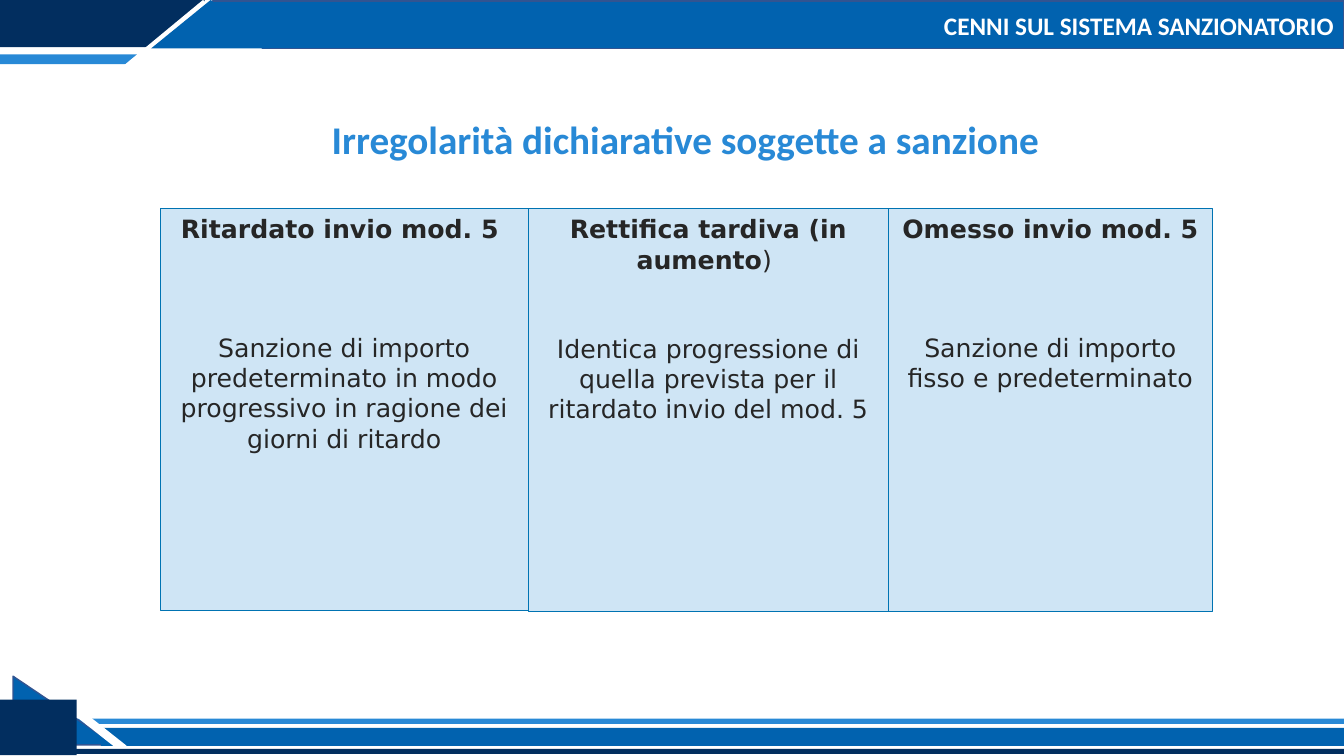
"""Build the slide on penalties for irregular declarations."""
from lxml import etree
from pptx import Presentation
from pptx.dml.color import RGBColor
from pptx.enum.shapes import MSO_CONNECTOR, MSO_SHAPE
from pptx.enum.text import MSO_ANCHOR, PP_ALIGN
from pptx.oxml.ns import qn
from pptx.util import Cm, Pt

RECT = MSO_SHAPE.RECTANGLE
PEAK = MSO_SHAPE.ISOSCELES_TRIANGLE
WEDGE = MSO_SHAPE.RIGHT_TRIANGLE
STRAIGHT = MSO_CONNECTOR.STRAIGHT
TOP, MIDDLE = MSO_ANCHOR.TOP, MSO_ANCHOR.MIDDLE
CENTER, RIGHT = PP_ALIGN.CENTER, PP_ALIGN.RIGHT

WHITE = RGBColor(0xFF, 0xFF, 0xFF)
NAVY = RGBColor(0x02, 0x2E, 0x5F)
BLUE = RGBColor(0x01, 0x62, 0xAF)
SKY = RGBColor(0x28, 0x89, 0xD6)
EDGE = RGBColor(0x32, 0x54, 0x91)
FRAME = RGBColor(0x00, 0x73, 0xB2)
INK = RGBColor(0x26, 0x26, 0x26)

TITLE = {"name": "Calibri", "size": Pt(18), "bold": True}
LEAD = {"name": "Calibri", "size": Pt(28), "bold": True}
HEAD = {"name": "DejaVu Sans", "size": Pt(18), "bold": True}
BODY = HEAD | {"bold": False}


def add_block(kind, box, fill, line=None, width=1):
    block = slide.shapes.add_shape(kind, *map(Cm, box))
    block.shadow.inherit = False
    block.fill.solid()
    block.fill.fore_color.rgb = fill
    if line is None:
        block.line.fill.background()
    else:
        block.line.color.rgb = line
        block.line.width = Pt(width)
    return block


def add_text(para, text, style, color, align):
    para.alignment = align
    run = para.add_run()
    run.text = text
    for key, value in style.items():
        setattr(run.font, key, value)
    run.font.color.rgb = color


deck = Presentation()
deck.slide_width, deck.slide_height = Cm(33.87), Cm(19.05)
slide = deck.slides.add_slide(deck.slide_layouts[5])

for kind, box, fill, line in [
    (RECT, (5.36, 0.03, 28.51, 1.19), BLUE, EDGE),
    (RECT, (0, 1.37, 3.45, 0.25), SKY, None),
    (RECT, (0, 0, 5.16, 1.19), NAVY, None),
    (PEAK, (3.12, 0, 3.99, 1.65), WHITE, None),
    (PEAK, (3.81, 0, 3, 1.22), BLUE, None),
    (RECT, (1.93, 18.11, 31.94, 0.13), SKY, None),
    (WEDGE, (0.33, 17.04, 2.57, 1.73), BLUE, EDGE),
    (RECT, (2.54, 18.34, 31.33, 0.46), BLUE, None),
]:
    add_block(kind, box, fill, line)

slash = slide.shapes.add_connector(STRAIGHT, *map(Cm, (3.12, 18.87, 1.93, 17.93)))
slash.line.color.rgb = WHITE
slash.line.width = Pt(6)
etree.SubElement(slash.element.spPr, qn("a:effectLst"))

add_block(RECT, (0, 17.63, 1.93, 1.4), NAVY)
add_block(RECT, (1.65, 18.87, 32.22, 0.13), NAVY)

title = slide.shapes.title
title.element.getparent().append(title.element)
title.left, title.top, title.width, title.height = map(Cm, (5.03, 0.1, 28.84, 1.19))
title.text_frame.vertical_anchor = MIDDLE
para = title.text_frame.paragraphs[0]
para.line_spacing = 0.9
add_text(para, "CENNI SUL SISTEMA SANZIONATORIO", TITLE, WHITE, RIGHT)

lead = slide.shapes.add_textbox(*map(Cm, (2.64, 2.77, 29.26, 1.45)))
lead.text_frame.word_wrap = True
add_text(lead.text_frame.paragraphs[0],
         "Irregolarità dichiarative soggette a sanzione", LEAD, SKY, CENTER)

left = 4.04
for width, height, gap, head, tail, body in [
    (9.27, 10.13, 63, "Ritardato invio mod. 5 ", "",
     "Sanzione di importo predeterminato in modo progressivo "
     "in ragione dei giorni di ritardo"),
    (9.08, 10.16, 42, "Rettifica tardiva (in aumento", ") ",
     "Identica progressione di quella prevista per il "
     "ritardato invio del mod. 5"),
    (8.16, 10.16, 63, "Omesso invio mod. 5", "",
     "Sanzione di importo fisso e predeterminato"),
]:
    card = add_block(RECT, (left, 5.26, width, height), SKY, FRAME, 0.75)
    tint = card.element.spPr.find(qn("a:solidFill"))[0]
    etree.SubElement(tint, qn("a:alpha"), val="22000")
    frame = card.text_frame
    frame.word_wrap = True
    frame.vertical_anchor = TOP
    para = frame.paragraphs[0]
    add_text(para, head, HEAD, INK, CENTER)
    if tail:
        add_text(para, tail, BODY, INK, CENTER)
    para = frame.add_paragraph()
    para.space_before = Pt(gap)
    add_text(para, body, BODY, INK, CENTER)
    left += width

deck.save("out.pptx")
